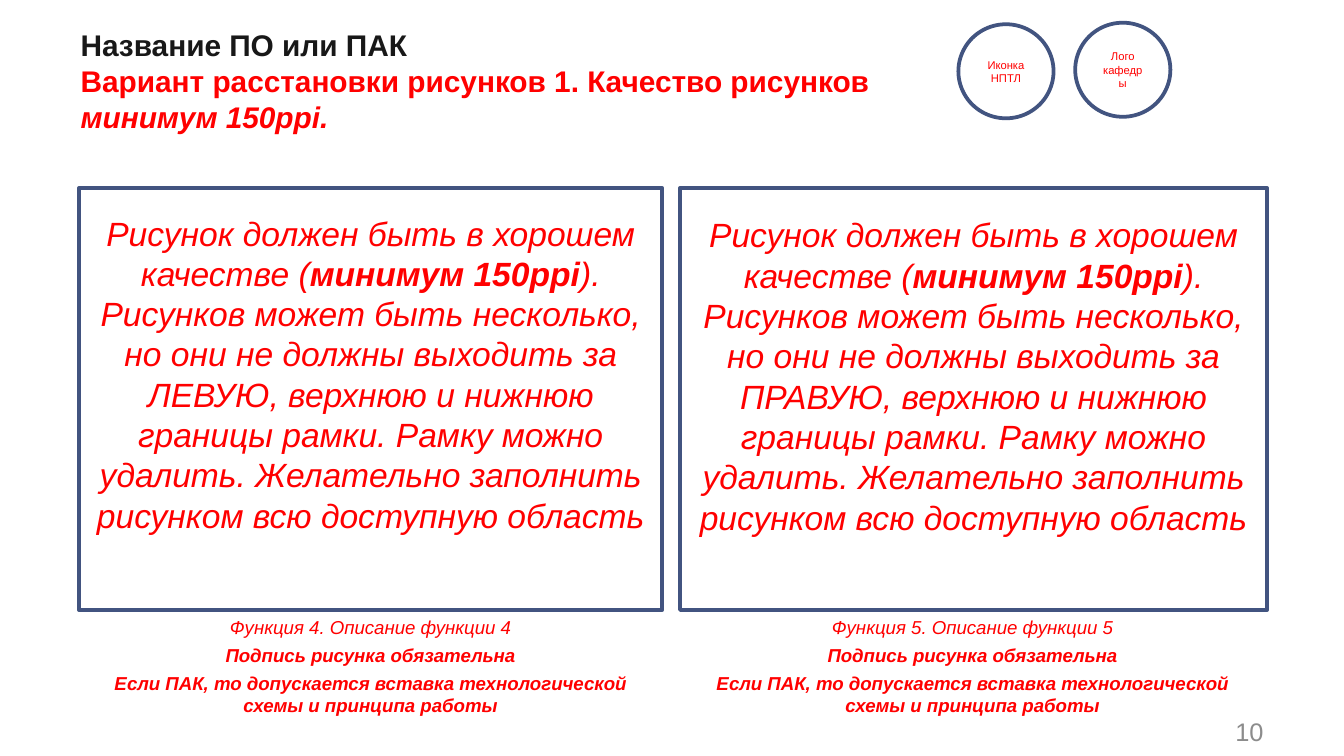
from pptx import Presentation
from pptx.dml.color import RGBColor
from pptx.enum.shapes import MSO_SHAPE
from pptx.enum.text import MSO_ANCHOR, MSO_AUTO_SIZE, PP_ALIGN
from pptx.util import Pt

RED, BLUE, WHITE, BLACK, GREY = "FF0000", "425480", "FFFFFF", "181818", "8C8C8C"
TOP, HEIGHT = 100.8, 226


def rgb(value):
    """Turn a hex string into a colour."""
    return RGBColor.from_string(value)


def set_all(obj, formats):
    """Set every attribute named in the dict."""
    for name, value in formats.items():
        setattr(obj, name, value)


def add_run(p, text, size, color=RED, **formats):
    """Add a formatted run to a paragraph."""
    r = p.add_run()
    r.text = text
    set_all(r.font, {"name": "Arial", "size": Pt(size), **formats})
    r.font.color.rgb = rgb(color)


def fill_text(tf, paragraphs, size, color=RED, align=PP_ALIGN.CENTER, after=0):
    """Write paragraphs given as lists of text and format pairs."""
    for i, runs in enumerate(paragraphs):
        p = tf.paragraphs[0] if i == 0 else tf.add_paragraph()
        set_all(p, {"alignment": align, "space_after": Pt(after)})
        for text, formats in runs:
            add_run(p, text, size, color, **formats)


def add_outline(s, kind, left, top, width, height):
    """Draw a white shape with a blue outline and return its text frame."""
    sp = s.shapes.add_shape(kind, Pt(left), Pt(top), Pt(width), Pt(height))
    sp.shadow.inherit = False
    sp.fill.solid()
    sp.fill.fore_color.rgb = rgb(WHITE)
    sp.line.color.rgb = rgb(BLUE)
    sp.line.width = Pt(2)
    sp.text_frame.word_wrap = True
    return sp.text_frame


def add_text(s, left, top, width, height, paragraphs, size, **formats):
    """Add a wrapping text box and return its text frame."""
    tf = s.shapes.add_textbox(Pt(left), Pt(top), Pt(width), Pt(height)).text_frame
    tf.word_wrap = True
    fill_text(tf, paragraphs, size, **formats)
    return tf


def add_title(s):
    """Fill the title placeholder with its two-colour heading."""
    sp = s.shapes.title
    set_all(sp, {"left": Pt(36), "top": Pt(10.8), "width": Pt(466), "height": Pt(62.6)})
    tf = sp.text_frame
    set_all(tf, {"word_wrap": True, "auto_size": MSO_AUTO_SIZE.NONE,
                 "vertical_anchor": MSO_ANCHOR.TOP})
    p = tf.paragraphs[0]
    p.alignment = PP_ALIGN.LEFT
    add_run(p, "Название ПО или ПАК", 16, BLACK, bold=True)
    p.add_line_break()
    add_run(p, "Вариант расстановки рисунков 1. Качество рисунков ", 16, bold=True)
    add_run(p, "минимум 150ppi.", 16, bold=True, italic=True)


def add_badge(s, left, top, lines):
    """Add a round badge with a small label."""
    tf = add_outline(s, MSO_SHAPE.OVAL, left, top, 51, 50.4)
    tf.vertical_anchor = MSO_ANCHOR.MIDDLE
    fill_text(tf, [[(line, {})] for line in lines], 6)


def add_panel(s, left, width, inset, side):
    """Add a picture frame with its instructions."""
    tf = add_outline(s, MSO_SHAPE.RECTANGLE, left, TOP, width, HEIGHT)
    set_all(tf, {"vertical_anchor": MSO_ANCHOR.TOP, "margin_top": Pt(inset)})
    italic = {"italic": True}
    fill_text(tf, [[
        ("Рисунок должен быть в хорошем качестве (", italic),
        ("минимум 150ppi", {"italic": True, "bold": True}),
        (f"). Рисунков может быть несколько, но они не должны выходить за {side}, "
         "верхнюю и нижнюю границы рамки. Рамку можно удалить. "
         "Желательно заполнить рисунком всю доступную область", italic),
    ]], 18, after=3)


def add_caption(s, left, number):
    """Add the caption under a picture frame."""
    strong = {"italic": True, "bold": True}
    add_text(s, left, TOP + HEIGHT - 0.6, 313.2, 62, [
        [(f"Функция {number}. Описание функции {number}", {"italic": True})],
        [("Подпись рисунка обязательна", strong)],
        [("Если ПАК, то допускается вставка технологической схемы и принципа работы", strong)],
    ], 10, after=3)


def main():
    """Build and save the slide."""
    prs = Presentation()
    set_all(prs, {"slide_width": Pt(720), "slide_height": Pt(405)})
    s = prs.slides.add_slide(prs.slide_layouts[5])
    add_title(s)
    add_badge(s, 513.4, 13, ["Иконка НПТЛ"])
    add_badge(s, 576, 12.2, ["Лого", "кафедры"])
    add_panel(s, 42.4, 312.5, 13, "ЛЕВУЮ")
    add_panel(s, 364.3, 314.6, 14, "ПРАВУЮ")
    add_caption(s, 41.8, 4)
    add_caption(s, 364.3, 5)
    tf = add_text(s, 643.7, 380.9, 40.3, 21.6, [[("10", {})]], 13.6,
                  color=GREY, align=PP_ALIGN.RIGHT)
    tf.vertical_anchor = MSO_ANCHOR.MIDDLE
    prs.save("out.pptx")


if __name__ == "__main__":
    main()
